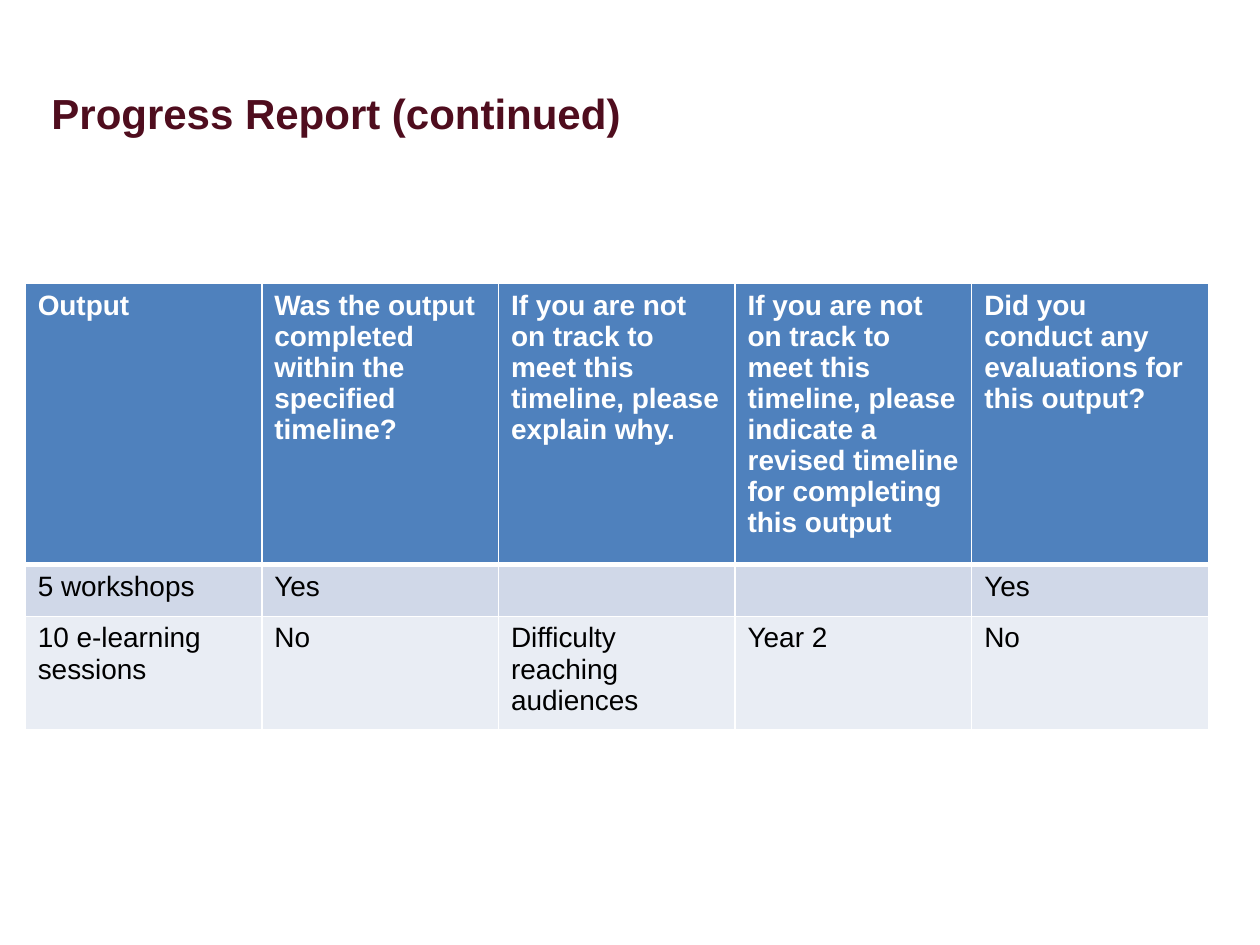
from lxml.etree import SubElement
from pptx import Presentation
from pptx.dml.color import RGBColor
from pptx.enum.text import MSO_ANCHOR
from pptx.oxml.ns import qn
from pptx.util import Inches, Pt

COLORS = {
    "title": "4F0D1E",
    "header": "4F81BD",
    "odd_row": "D0D8E8",
    "even_row": "E9EDF4",
    "white": "FFFFFF",
    "black": "000000",
}
HEADERS = [
    "Output",
    "Was the output completed within the specified timeline?",
    "If you are not on track to meet this timeline, please explain why.",
    "If you are not on track to meet this timeline, please indicate a "
    "revised timeline for completing this output",
    "Did you conduct any evaluations for this output?",
]
OUTPUTS = [
    ["5 workshops", "Yes", "", "", "Yes"],
    ["10 e-learning sessions", "No", "Difficulty reaching audiences", "Year 2", "No"],
]
ROW_HEIGHTS = [2.07, 0.41, 0.84]


def write(tf, text, size=16, color="black", bold=False):
    """Put one formatted paragraph into a text frame."""
    tf.word_wrap = True
    p = tf.paragraphs[0]
    font = p.font
    if text:
        r = p.add_run()
        r.text = text
        font = r.font
    font.name = "Arial"
    font.size = Pt(size)
    font.bold = bold
    font.color.rgb = RGBColor.from_string(COLORS[color])


def style_cell(cell, fill, top=1, bottom=1):
    """Give a cell white borders and a solid fill."""
    tcPr = cell._tc.get_or_add_tcPr()
    for side, width in (("L", 1), ("R", 1), ("T", top), ("B", bottom)):
        ln = SubElement(tcPr, qn(f"a:ln{side}"), w=str(Pt(width)))
        solid = SubElement(ln, qn("a:solidFill"))
        SubElement(solid, qn("a:srgbClr"), val=COLORS["white"])
    cell.fill.solid()
    cell.fill.fore_color.rgb = RGBColor.from_string(COLORS[fill])


def add_title(s, left, top, width, height):
    """Place the slide heading at the bottom of its box."""
    tf = s.shapes.add_textbox(left, top, width, height).text_frame
    tf.vertical_anchor = MSO_ANCHOR.BOTTOM
    write(tf, "Progress Report (continued)", size=24, color="title", bold=True)


def add_progress_table(s, left, top, width, height):
    """Place the table of outputs with equal columns."""
    rows = [HEADERS, *OUTPUTS]
    table = s.shapes.add_table(len(rows), len(HEADERS), left, top, width, height).table
    fills = ["header", "odd_row", "even_row"]
    for i, values in enumerate(rows):
        table.rows[i].height = Inches(ROW_HEIGHTS[i])
        is_header = i == 0
        for j, text in enumerate(values):
            cell = table.cell(i, j)
            style_cell(cell, fills[i], top=3 if i == 1 else 1, bottom=3 if is_header else 1)
            write(cell.text_frame, text, color="white" if is_header else "black", bold=is_header)


def main():
    """Build and save the slide."""
    prs = Presentation()
    prs.slide_width, prs.slide_height = Inches(10), Inches(7.5)
    s = prs.slides.add_slide(prs.slide_layouts[6])
    add_title(s, Inches(0.31), Inches(0.3), Inches(9.39), Inches(0.84))
    add_progress_table(s, Inches(0.2), Inches(2.25), Inches(9.39), Inches(sum(ROW_HEIGHTS)))
    prs.save("out.pptx")


if __name__ == "__main__":
    main()
